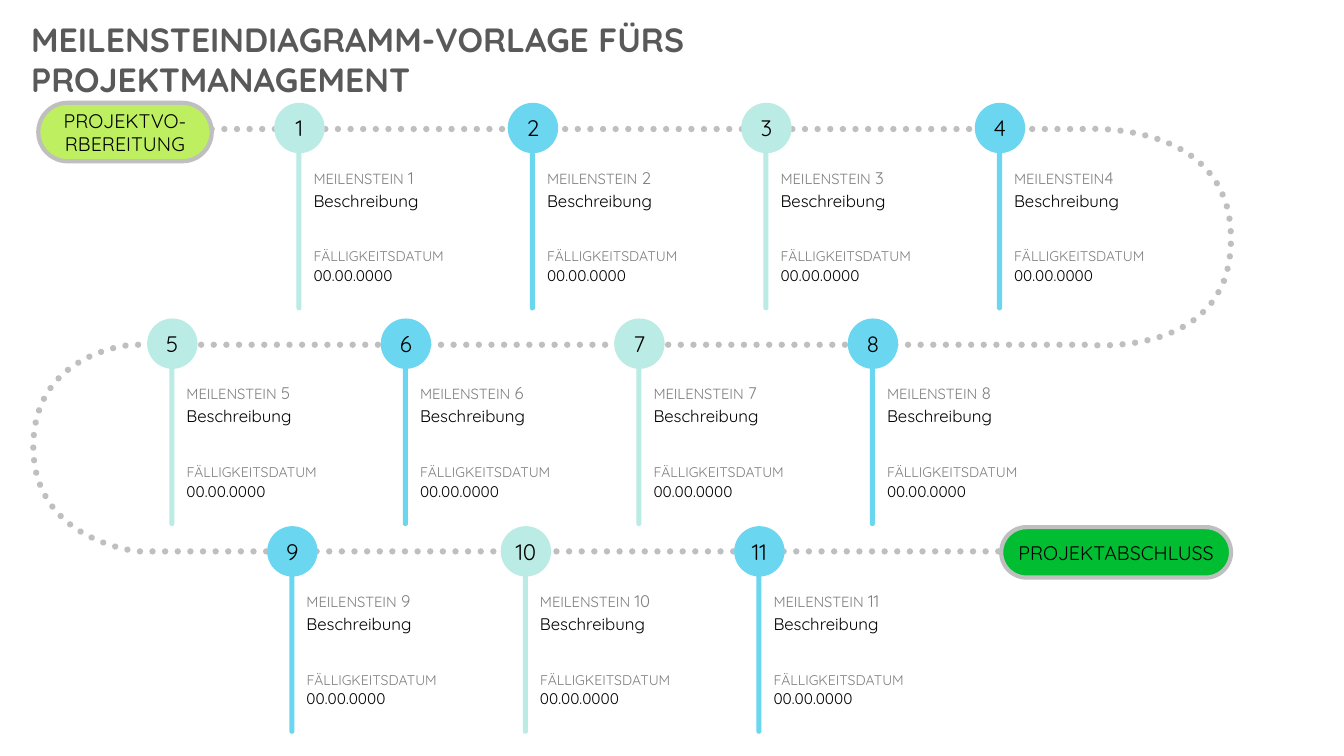
from pptx import Presentation
from pptx import util as u
from pptx.dml.color import RGBColor
from pptx.enum import dml, shapes, text
from pptx.oxml.ns import qn

FONT = "Quicksand"
BLACK = RGBColor(0x00, 0x00, 0x00)
TITLE_GRAY = RGBColor(0x59, 0x59, 0x59)
LABEL_GRAY = RGBColor(0x80, 0x80, 0x80)
LINE_GRAY = RGBColor(0xBF, 0xBF, 0xBF)
MINT = RGBColor(0xBB, 0xEB, 0xE5)
SKY = RGBColor(0x6B, 0xD6, 0xF0)
LIME = RGBColor(0xBE, 0xEF, 0x60)
GREEN = RGBColor(0x00, 0xBD, 0x32)

PITCH = 2.316
CURVE_STEPS = 30
ROWS = [
    (2.72, 1.02, (1, 2, 3, 4), (MINT, SKY)),
    (1.46, 3.16, (5, 6, 7, 8), (MINT, SKY)),
    (2.65, 5.22, (9, 10, 11), (SKY, MINT)),
]
ROAD_START = (2.1, 1.28)
ROAD = [
    [(10.73, 1.28)],
    [(10.73, 1.28), (12.21, 1.17), (12.21, 2.37)],
    [(12.21, 3.57), (10.78, 3.42), (10.78, 3.42)],
    [(1.31, 3.42)],
    [(1.31, 3.42), (0.33, 3.49), (0.33, 4.43)],
    [(0.33, 5.37), (1.37, 5.47), (1.37, 5.47)],
    [(10.28, 5.47)],
]


def inches(*values):
    return [u.Inches(v) for v in values]


def add_runs(p, runs, color, bold=False):
    for words, size in runs:
        r = p.add_run()
        r.text = words
        r.font.name = FONT
        r.font.size = u.Pt(size)
        r.font.bold = bold
        r.font.color.rgb = color


def clear_insets(tf):
    tf.word_wrap = True
    tf.margin_left = tf.margin_top = tf.margin_right = tf.margin_bottom = 0


def add_label(parent, box, runs, color):
    tf = parent.shapes.add_textbox(*inches(*box)).text_frame
    clear_insets(tf)
    add_runs(tf.paragraphs[0], runs, color)


def add_solid(parent, kind, box, fill, outline=None):
    sp = parent.shapes.add_shape(kind, *inches(*box))
    sp.shadow.inherit = False
    sp.fill.solid()
    sp.fill.fore_color.rgb = fill
    if kind == shapes.MSO_SHAPE.ROUNDED_RECTANGLE:
        sp.adjustments[0] = 0.5
    if outline is None:
        sp.line.fill.background()
    else:
        sp.line.color.rgb = outline
        sp.line.width = u.Pt(3)
    return sp


def center_text(sp, words, size):
    tf = sp.text_frame
    clear_insets(tf)
    tf.vertical_anchor = text.MSO_ANCHOR.MIDDLE
    p = tf.paragraphs[0]
    p.alignment = text.PP_ALIGN.CENTER
    add_runs(p, [(words, size)], BLACK)


def add_title(s, box):
    tf = s.shapes.add_textbox(*inches(*box)).text_frame
    tf.word_wrap = True
    tf.auto_size = text.MSO_AUTO_SIZE.SHAPE_TO_FIT_TEXT
    words = "MEILENSTEINDIAGRAMM-VORLAGE FÜRS PROJEKTMANAGEMENT"
    add_runs(tf.paragraphs[0], [(words, 24)], TITLE_GRAY, bold=True)


def bezier(a, b, c, d):
    for i in range(1, CURVE_STEPS + 1):
        t = i / CURVE_STEPS
        weights = ((1 - t) ** 3, 3 * t * (1 - t) ** 2, 3 * t * t * (1 - t), t ** 3)
        yield tuple(sum(w * q[k] for w, q in zip(weights, (a, b, c, d))) for k in (0, 1))


def add_road(s):
    points = [ROAD_START]
    for segment in ROAD:
        points += list(bezier(points[-1], *segment)) if len(segment) == 3 else segment
    builder = s.shapes.build_freeform(*inches(*points[0]))
    builder.add_line_segments([inches(*q) for q in points[1:]], close=False)
    sp = builder.convert_to_shape()
    sp.shadow.inherit = False
    sp.fill.background()
    sp.line.color.rgb = LINE_GRAY
    sp.line.width = u.Pt(4.5)
    sp.line.dash_style = dml.MSO_LINE.ROUND_DOT
    sp.element.spPr.find(qn("a:ln")).set("cap", "rnd")


def add_terminal(s, box, words, fill):
    sp = add_solid(s, shapes.MSO_SHAPE.ROUNDED_RECTANGLE, box, fill, LINE_GRAY)
    center_text(sp, words, 14)


def add_milestone(s, x, y, number, color):
    group = s.shapes.add_group_shape()
    add_solid(group, shapes.MSO_SHAPE.ROUNDED_RECTANGLE, (x + 0.22, y + 0.19, 0.05, 1.87), color)
    gap = [] if number == 4 else [(" ", 11)]
    heading = [("MEILENSTEIN", 10.5), *gap, (str(number), 12)]
    left = x + 0.39
    add_label(group, (left, y + 0.64, 1.17, 0.26), heading, LABEL_GRAY)
    add_label(group, (left, y + 0.87, 1.37, 0.57), [("Beschreibung", 12)], BLACK)
    add_label(group, (left, y + 1.44, 1.75, 0.2), [("FÄLLIGKEITSDATUM", 10)], LABEL_GRAY)
    add_label(group, (left, y + 1.62, 0.9, 0.26), [("00.00.0000", 11)], BLACK)
    dot = add_solid(group, shapes.MSO_SHAPE.OVAL, (x, y, 0.5, 0.5), color)
    center_text(dot, str(number), 16)


def add_row(s, left, top, numbers, colors):
    for i, number in enumerate(numbers):
        add_milestone(s, left + i * PITCH, top, number, colors[i % 2])


def main():
    prs = Presentation()
    prs.slide_width, prs.slide_height = inches(13.33, 7.5)
    s = prs.slides.add_slide(prs.slide_layouts[6])
    add_title(s, (0.21, 0.14, 10.44, 0.5))
    add_road(s)
    add_terminal(s, (0.38, 1.02, 1.72, 0.58), "PROJEKTVO-RBEREITUNG", LIME)
    for row in ROWS:
        add_row(s, *row)
    add_terminal(s, (9.93, 5.23, 2.28, 0.5), "PROJEKTABSCHLUSS", GREEN)
    prs.save("out.pptx")


if __name__ == "__main__":
    main()
